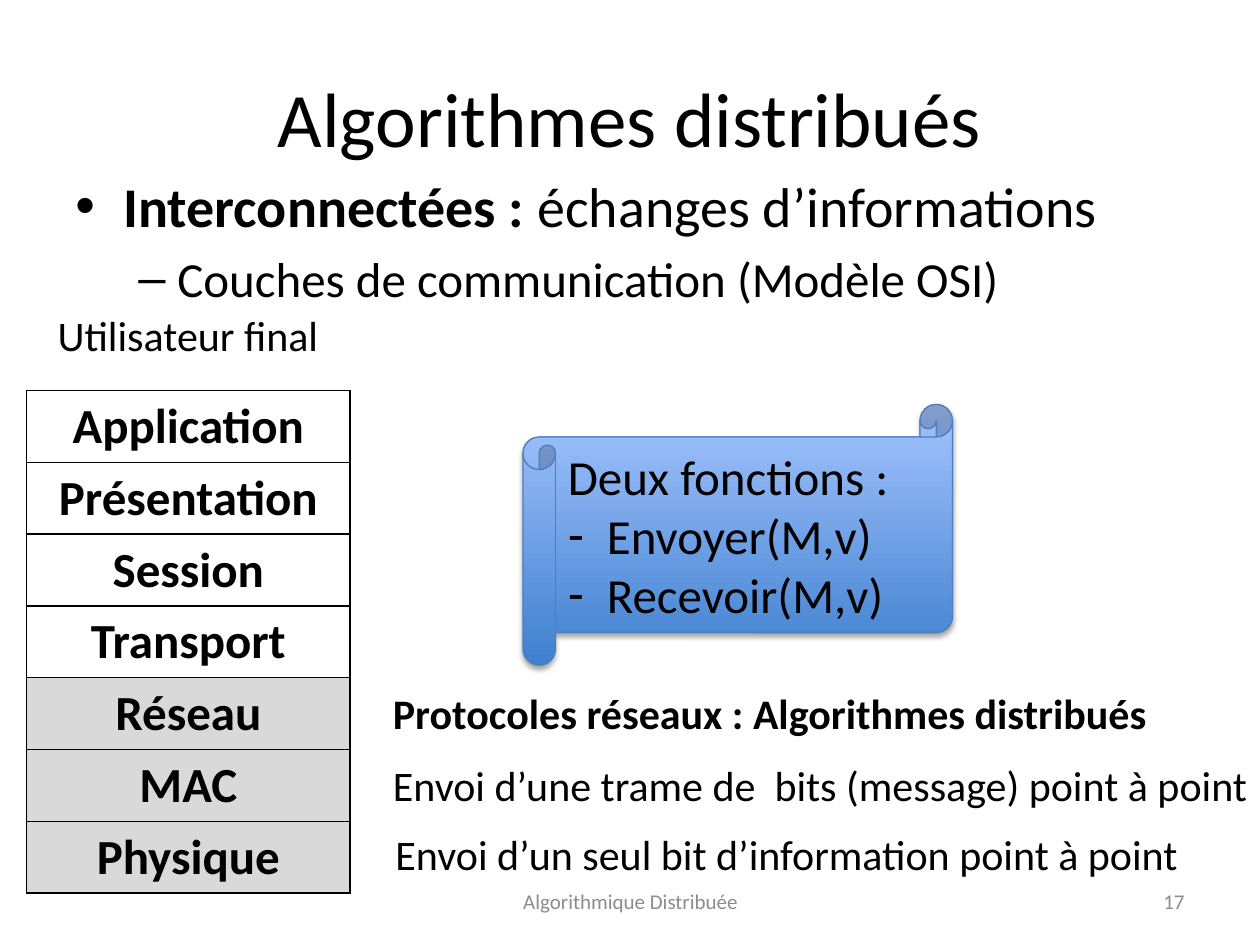
import pptx
import pptx.util
import pptx.dml.color
import pptx.enum.shapes
import pptx.enum.text
import pptx.oxml
import pptx.oxml.ns
import lxml.etree

Inches = pptx.util.Inches
Pt = pptx.util.Pt
ALIGN = pptx.enum.text.PP_ALIGN
ANCHOR = pptx.enum.text.MSO_ANCHOR
FONT, BLACK, GREY = "Calibri", "000000", "8C8C8C"

# Content: a paragraph is a list of (text, bold) spans
TITLE = "Algorithmes distribués"
FOOTER, NUMBER = "Algorithmique Distribuée", "17"
OUTLINE = [
    # spans, size, bullet, left margin, hanging indent, space before
    ([("Interconnectées : ", True), ("échanges d’informations", False)],
     32, "•", 0.38, 0.38, 0),
    ([("Couches de communication (Modèle OSI)", False)],
     28, "–", 0.81, 0.31, 5.6),
]
LAYERS = [
    ("Application", "FFFFFF"), ("Présentation", "FFFFFF"),
    ("Session", "FFFFFF"), ("Transport", "FFFFFF"),
    ("Réseau", "D9D9D9"), ("MAC", "D9D9D9"), ("Physique", "D9D9D9"),
]
NOTES = [
    # text, bold, left, top, width
    ("Utilisateur final", False, 0.36, 2.41, 2.3),
    ("Protocoles réseaux : Algorithmes distribués", True, 3.02, 5.41, 6.26),
    ("Envoi d’une trame de  bits (message) point à point", False, 3.02, 5.98, 7.34),
    ("Envoi d’un seul bit d’information point à point", False, 3.04, 6.53, 6.68),
]
SCROLL = [("Deux fonctions :", None), ("Envoyer(M,v)", "-"), ("Recevoir(M,v)", "-")]


def rgb(value):
    return pptx.dml.color.RGBColor.from_string(value)


def add_xml(parent, tag, **attributes):
    child = lxml.etree.SubElement(parent, pptx.oxml.ns.qn(tag))
    for name, value in attributes.items():
        child.set(name, str(value))
    return child


def write(para, spans, size, color=BLACK, align=ALIGN.LEFT, bullet=None,
          margin=0, hanging=0, before=0):
    para.alignment = align
    para.space_before = Pt(before)
    if bullet:
        properties = para._p.get_or_add_pPr()
        properties.set("marL", str(Inches(margin)))
        properties.set("indent", str(-Inches(hanging)))
        add_xml(properties, "a:buFont", typeface="Arial")
        add_xml(properties, "a:buChar", char=bullet)
    for text, bold in spans:
        span = para.add_run()
        span.text = text
        span.font.name, span.font.size = FONT, Pt(size)
        span.font.bold = bold
        span.font.color.rgb = rgb(color)


def next_paragraph(frame, index):
    return frame.add_paragraph() if index else frame.paragraphs[0]


def add_box(page, place, anchor=ANCHOR.TOP, wrap=True):
    frame = page.shapes.add_textbox(*map(Inches, place)).text_frame
    frame.word_wrap = wrap
    frame.vertical_anchor = anchor
    if not wrap:
        frame.auto_size = pptx.enum.text.MSO_AUTO_SIZE.SHAPE_TO_FIT_TEXT
    return frame


def add_layers(page):
    left, top, width, row_height = 0.21, 3.1, 2.57, 0.57
    table = page.shapes.add_table(
        len(LAYERS), 1, Inches(left), Inches(top),
        Inches(width), Inches(row_height * len(LAYERS))).table
    for index, (name, fill) in enumerate(LAYERS):
        cell = table.cell(index, 0)
        write(cell.text_frame.paragraphs[0], [(name, True)], 28, align=ALIGN.CENTER)
        properties = cell._tc.get_or_add_tcPr()
        for side in ("a:lnL", "a:lnR", "a:lnT", "a:lnB"):
            border = add_xml(properties, side, w=Pt(1))
            add_xml(add_xml(border, "a:solidFill"), "a:srgbClr", val=BLACK)
        cell.fill.solid()
        cell.fill.fore_color.rgb = rgb(fill)


def add_scroll(page):
    scroll = page.shapes.add_shape(
        pptx.enum.shapes.MSO_SHAPE.HORIZONTAL_SCROLL,
        *map(Inches, (4.15, 3.21, 3.41, 2.07)))
    scroll.fill.gradient()
    scroll.fill.gradient_angle = 90
    for stop, color in zip(scroll.fill.gradient_stops, ("3F80CE", "A4C4FF")):
        stop.color.rgb = rgb(color)
    scroll.line.color.rgb = rgb("4B7EBC")
    scroll.line.width = Pt(0.75)
    # Soft shadow straight below
    scroll.shadow.inherit = False
    effects = scroll._element.spPr.find(pptx.oxml.ns.qn("a:effectLst"))
    shadow = add_xml(effects, "a:outerShdw", blurRad=Pt(3.1), dist=Pt(1.8),
                     dir=90 * 60000, rotWithShape=0)
    add_xml(add_xml(shadow, "a:srgbClr", val=BLACK), "a:alpha", val=35000)
    frame = scroll.text_frame
    frame.word_wrap = True
    frame.vertical_anchor = ANCHOR.MIDDLE
    for index, (text, bullet) in enumerate(SCROLL):
        write(next_paragraph(frame, index), [(text, False)], 28,
              bullet=bullet, margin=0.31, hanging=0.31)


def main():
    deck = pptx.Presentation()
    deck.slide_width, deck.slide_height = Inches(10), Inches(7.5)
    page = deck.slides.add_slide(deck.slide_layouts[6])

    # Title, footer and page number
    for text, place, size, color, align in (
            (TITLE, (0.5, 0.3, 9, 1.25), 44, BLACK, ALIGN.CENTER),
            (FOOTER, (3.42, 6.95, 3.17, 0.4), 12, GREY, ALIGN.CENTER),
            (NUMBER, (7.17, 6.95, 2.33, 0.4), 12, GREY, ALIGN.RIGHT)):
        frame = add_box(page, place, ANCHOR.MIDDLE)
        write(frame.paragraphs[0], [(text, False)], size, color, align)

    # Outline
    frame = add_box(page, (0.5, 1.31, 9, 4.95))
    for index, (spans, size, bullet, margin, hanging, before) in enumerate(OUTLINE):
        write(next_paragraph(frame, index), spans, size, bullet=bullet,
              margin=margin, hanging=hanging, before=before)

    # Layer stack, its notes and the scroll
    add_layers(page)
    for text, bold, left, top, width in NOTES:
        frame = add_box(page, (left, top, width, 0.5), wrap=False)
        write(frame.paragraphs[0], [(text, bold)], 24)
    add_scroll(page)

    deck.save("out.pptx")


if __name__ == "__main__":
    main()
